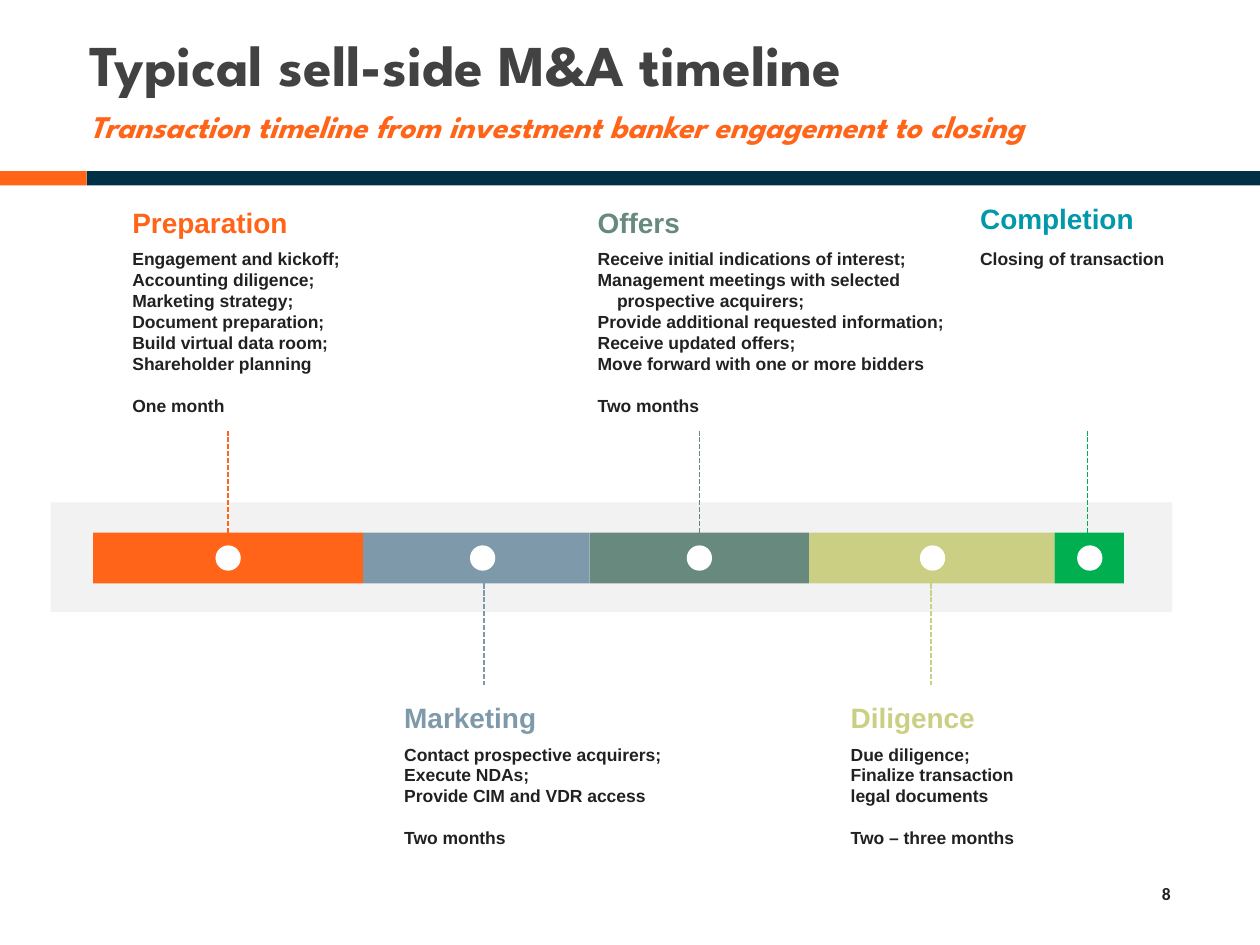
from dataclasses import dataclass

from lxml import etree
from pptx import Presentation
from pptx.dml.color import RGBColor
from pptx.enum.dml import MSO_LINE
from pptx.enum.shapes import MSO_CONNECTOR, MSO_SHAPE
from pptx.enum.text import MSO_ANCHOR, PP_ALIGN
from pptx.oxml.ns import qn
from pptx.util import Cm, Pt

RECTANGLE, OVAL = MSO_SHAPE.RECTANGLE, MSO_SHAPE.OVAL
STRAIGHT, DASH = MSO_CONNECTOR.STRAIGHT, MSO_LINE.SQUARE_DOT
TOP, MIDDLE = MSO_ANCHOR.TOP, MSO_ANCHOR.MIDDLE
LEFT, RIGHT = PP_ALIGN.LEFT, PP_ALIGN.RIGHT
TITLE_ONLY = 5

ORANGE, NAVY, TEXT = "FF6418", "003045", "212121"
DISPLAY_FONT, BODY_FONT = "League Spartan", "Arial"

# Vertical positions in centimetres
BAR_TOP, BAR_HEIGHT = 10.74, 1.02
DOT_SIZE = 0.51
STEM_LENGTH = 2.05


@dataclass(frozen=True)
class Phase:
    name: str
    steps: tuple[str, ...]
    duration: str
    color: str
    heading_color: str
    bar_left: float
    bar_right: float
    dot_x: float
    stem_x: float
    text_left: float
    text_width: float
    above: bool
    heading_top: float
    continuation: int = -1  # index of the step indented under the one before


PHASES = (
    Phase("Preparation",
          ("Engagement and kickoff;", "Accounting diligence;", "Marketing strategy;",
           "Document preparation;", "Build virtual data room;", "Shareholder planning"),
          "One month", ORANGE, ORANGE, 1.88, 7.32, 4.6, 4.6, 2.67, 6.22, True, 4.14),
    Phase("Marketing",
          ("Contact prospective acquirers;", "Execute NDAs;", "Provide CIM and VDR access"),
          "Two months", "7E99AA", "7E99AA", 7.32, 11.89, 9.73, 9.75, 8.15, 5.59, False, 14.12),
    Phase("Offers",
          ("Receive initial indications of interest;", "Management meetings with selected",
           "prospective acquirers;", "Provide additional requested information;",
           "Receive updated offers;", "Move forward with one or more bidders"),
          "Two months", "688A7E", "688A7E", 11.89, 16.31, 14.1, 14.1, 12.05, 7.1, True, 4.14, 2),
    Phase("Diligence",
          ("Due diligence;", "Finalize transaction legal documents"),
          "Two – three months", "CBCF83", "CBCF83",
          16.31, 21.26, 18.8, 18.77, 17.15, 3.76, False, 14.12),
    Phase("Completion", ("Closing of transaction",), "", "00B050", "0098AA",
          21.26, 22.66, 21.97, 21.92, 19.76, 5.64, True, 4.06),
)


def rgb(color: str) -> RGBColor:
    return RGBColor.from_string(color)


def add_block(slide, kind, left: float, top: float, width: float, height: float, color: str):
    shape = slide.shapes.add_shape(kind, Cm(left), Cm(top), Cm(width), Cm(height))
    shape.shadow.inherit = False
    shape.fill.solid()
    shape.fill.fore_color.rgb = rgb(color)
    shape.line.fill.background()


def add_stem(slide, x: float, start: float, end: float, color: str):
    connector = slide.shapes.add_connector(STRAIGHT, Cm(x), Cm(start), Cm(x), Cm(end))
    connector.line.color.rgb = rgb(color)
    connector.line.width = Pt(1)
    connector.line.dash_style = DASH
    etree.SubElement(connector._element.spPr, qn("a:effectLst"))


def add_text(slide, text: str, left: float, top: float, width: float, height: float,
             size: float, color: str, font: str = BODY_FONT, inset: bool = False):
    shape = slide.shapes.add_textbox(Cm(left), Cm(top), Cm(width), Cm(height))
    frame = shape.text_frame
    if not inset:
        frame.margin_left = frame.margin_top = frame.margin_right = frame.margin_bottom = 0
    format_text(frame, text, size, color, font)
    return frame


def format_text(frame, text: str, size: float, color: str, font: str, anchor=TOP, align=LEFT):
    frame.word_wrap = True
    frame.vertical_anchor = anchor
    frame.text = text
    for paragraph in frame.paragraphs:
        paragraph.alignment = align
        for run in paragraph.runs:
            run.font.name = font
            run.font.size = Pt(size)
            run.font.bold = True
            run.font.color.rgb = rgb(color)


def add_phase_text(slide, phase: Phase):
    add_text(slide, phase.name, phase.text_left, phase.heading_top, phase.text_width, 0.69,
             16, phase.heading_color)
    lines = phase.steps + ((phase.duration,) if phase.duration else ())
    frame = add_text(slide, "\n".join(lines), phase.text_left, 5 if phase.above else 14.99,
                     phase.text_width, 0.43 * (len(lines) + 1), 10, TEXT)
    for index, paragraph in enumerate(frame.paragraphs):
        paragraph.line_spacing = Pt(12)
        if index == phase.continuation:
            paragraph._p.get_or_add_pPr().set("marL", str(Cm(0.39)))
    if phase.duration:
        frame.paragraphs[-1].space_before = Pt(12)


def add_phase_marker(slide, phase: Phase):
    add_block(slide, RECTANGLE, phase.bar_left, BAR_TOP,
              phase.bar_right - phase.bar_left, BAR_HEIGHT, phase.color)
    add_block(slide, OVAL, phase.dot_x - DOT_SIZE / 2,
              BAR_TOP + (BAR_HEIGHT - DOT_SIZE) / 2, DOT_SIZE, DOT_SIZE, "FFFFFF")
    start = BAR_TOP if phase.above else BAR_TOP + BAR_HEIGHT
    end = start - STEM_LENGTH if phase.above else start + STEM_LENGTH
    add_stem(slide, phase.stem_x, start, end, phase.color)


def main():
    presentation = Presentation()
    presentation.slide_width, presentation.slide_height = Cm(25.4), Cm(19.05)
    slide = presentation.slides.add_slide(presentation.slide_layouts[TITLE_ONLY])

    # Header band
    add_block(slide, RECTANGLE, 0, 3.45, 1.75, 0.29, ORANGE)
    add_block(slide, RECTANGLE, 1.75, 3.45, 23.65, 0.29, NAVY)

    # Title and subtitle
    title = slide.shapes.title
    title.left, title.top, title.width, title.height = Cm(1.55), Cm(0), Cm(22.1), Cm(2.74)
    format_text(title.text_frame, "Typical sell-side M&A timeline", 33, "424242",
                DISPLAY_FONT, MIDDLE)
    title.text_frame.paragraphs[0].line_spacing = 0.9
    subtitle = add_text(slide, "Transaction timeline from investment banker engagement to closing",
                        1.55, 2.11, 22.1, 1.68, 18, ORANGE, DISPLAY_FONT, inset=True)
    subtitle.paragraphs[0].line_spacing = 0.9
    subtitle.paragraphs[0].runs[0].font.italic = True

    # Timeline
    add_block(slide, RECTANGLE, 1.02, 10.13, 22.61, 2.21, "F2F2F2")
    for phase in PHASES:
        add_phase_marker(slide, phase)
        add_phase_text(slide, phase)

    # Page number
    number = add_text(slide, "8", 22.15, 17.5, 1.7, 1.02, 10, TEXT, "Calibri", inset=True)
    number.vertical_anchor = MIDDLE
    number.paragraphs[0].alignment = RIGHT

    presentation.save("out.pptx")


if __name__ == "__main__":
    main()
